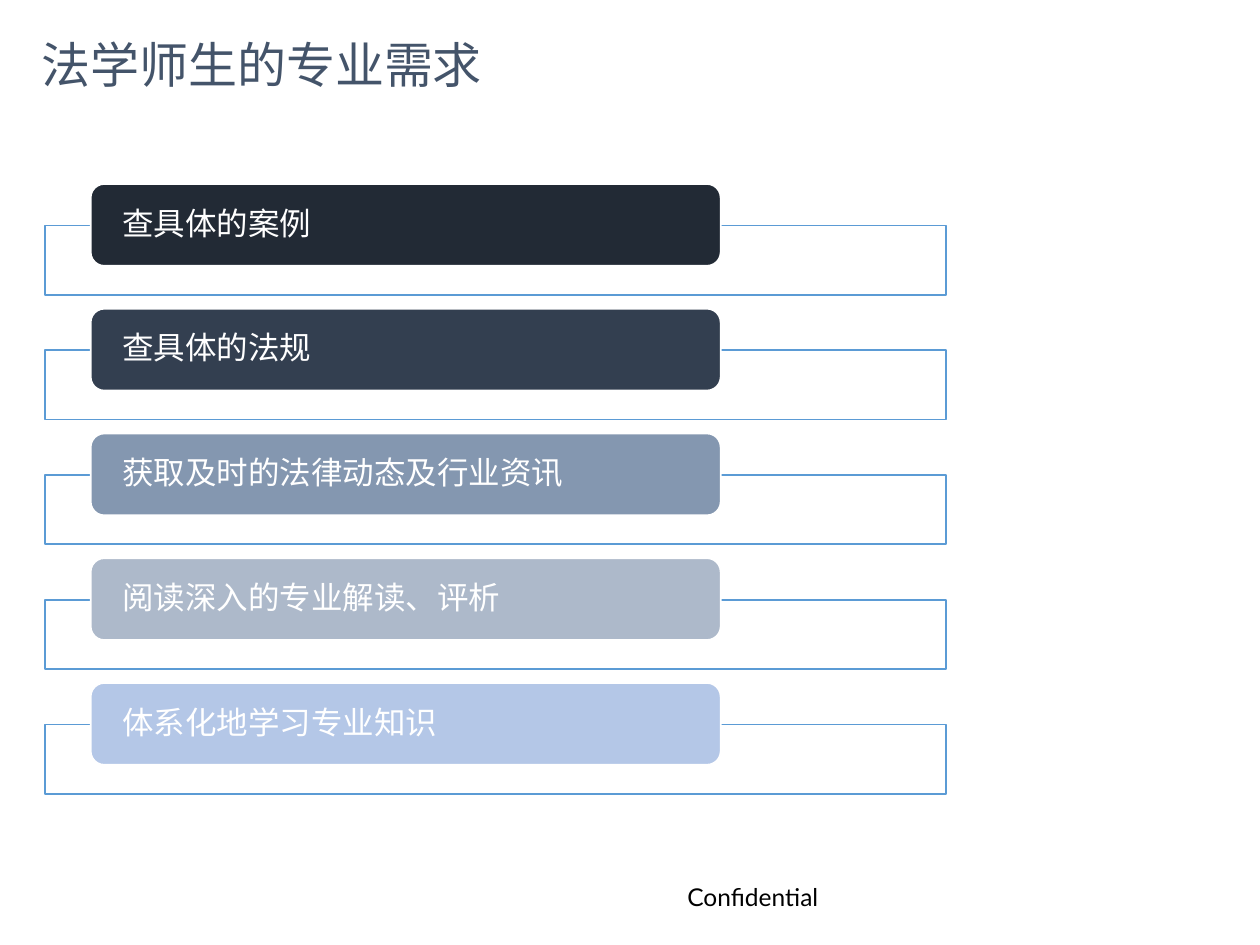
from lxml import etree
from pptx import Presentation
from pptx.dml.color import RGBColor
from pptx.enum.shapes import MSO_SHAPE
from pptx.enum.text import MSO_ANCHOR, MSO_AUTO_SIZE, PP_ALIGN
from pptx.oxml.ns import qn
from pptx.util import Inches, Pt

RECTANGLE = MSO_SHAPE.RECTANGLE
ROUNDED = MSO_SHAPE.ROUNDED_RECTANGLE
MIDDLE, TOP = MSO_ANCHOR.MIDDLE, MSO_ANCHOR.TOP
LEFT, CENTER = PP_ALIGN.LEFT, PP_ALIGN.CENTER
CJK_FONT = "Noto Sans CJK SC"

TITLE = "法学师生的专业需求"
FOOTER = "Confidential"
NEEDS = [
    ("查具体的案例", "222A35"),
    ("查具体的法规", "333F50"),
    ("获取及时的法律动态及行业资讯", "8497B0"),
    ("阅读深入的专业解读、评析", "ADB9CA"),
    ("体系化地学习专业知识", "B4C7E7"),
]
ROW_PITCH = 0.99
FRAME = (0.36, 1.79, 7.15, 0.55)
LABEL = (0.72, 1.46, 5, 0.65)


def rgb(value):
    return RGBColor.from_string(value)


def write(shape, text, size, font_name, color, align=LEFT, anchor=MIDDLE):
    frame = shape.text_frame
    frame.text = text
    frame.word_wrap = True
    frame.auto_size = MSO_AUTO_SIZE.NONE
    frame.vertical_anchor = anchor
    paragraph = frame.paragraphs[0]
    paragraph.alignment = align
    font = paragraph.runs[0].font
    font.size, font.name = Pt(size), font_name
    font.color.rgb = rgb(color)
    east_asian = etree.SubElement(paragraph.runs[0]._r.get_or_add_rPr(), qn("a:ea"))
    east_asian.set("typeface", CJK_FONT)


def add_box(slide, kind, box, row, fill, line):
    """Add a filled, outlined shape, moved down by its row number."""
    left, top, width, height = box
    shape = slide.shapes.add_shape(
        kind, Inches(left), Inches(top + row * ROW_PITCH), Inches(width), Inches(height))
    shape.shadow.inherit = False
    shape.fill.solid()
    shape.fill.fore_color.rgb = rgb(fill)
    shape.line.color.rgb = rgb(line)
    shape.line.width = Pt(1)
    return shape


def add_need(slide, row, text, color):
    frame = add_box(slide, RECTANGLE, FRAME, row, "FFFFFF", "5B9BD5")
    fill_color = frame._element.spPr.find(qn("a:solidFill"))[0]
    etree.SubElement(fill_color, qn("a:alpha")).set("val", "90000")

    label = add_box(slide, ROUNDED, LABEL, row, color, "FFFFFF")
    write(label, text, 18, CJK_FONT, "FFFFFF")
    text_frame = label.text_frame
    text_frame.margin_left = text_frame.margin_right = Inches(0.22)
    text_frame.margin_top = text_frame.margin_bottom = 0
    text_frame.paragraphs[0].line_spacing = 0.9


def main():
    presentation = Presentation()
    presentation.slide_width, presentation.slide_height = Inches(10), Inches(7.5)
    slide = presentation.slides.add_slide(presentation.slide_layouts.get_by_name("Title Only"))

    title = slide.shapes.title
    title.left, title.top = Inches(0.23), Inches(0.22)
    title.width, title.height = Inches(9.41), Inches(0.71)
    write(title, TITLE, 28, "Calibri", "44546A", anchor=TOP)

    for row, (text, color) in enumerate(NEEDS):
        add_need(slide, row, text, color)

    footer = slide.shapes.add_textbox(Inches(5.1), Inches(6.95), Inches(1.75), Inches(0.34))
    write(footer, FOOTER, 14, "Lato", "000000", align=CENTER)

    presentation.save("out.pptx")


if __name__ == "__main__":
    main()
